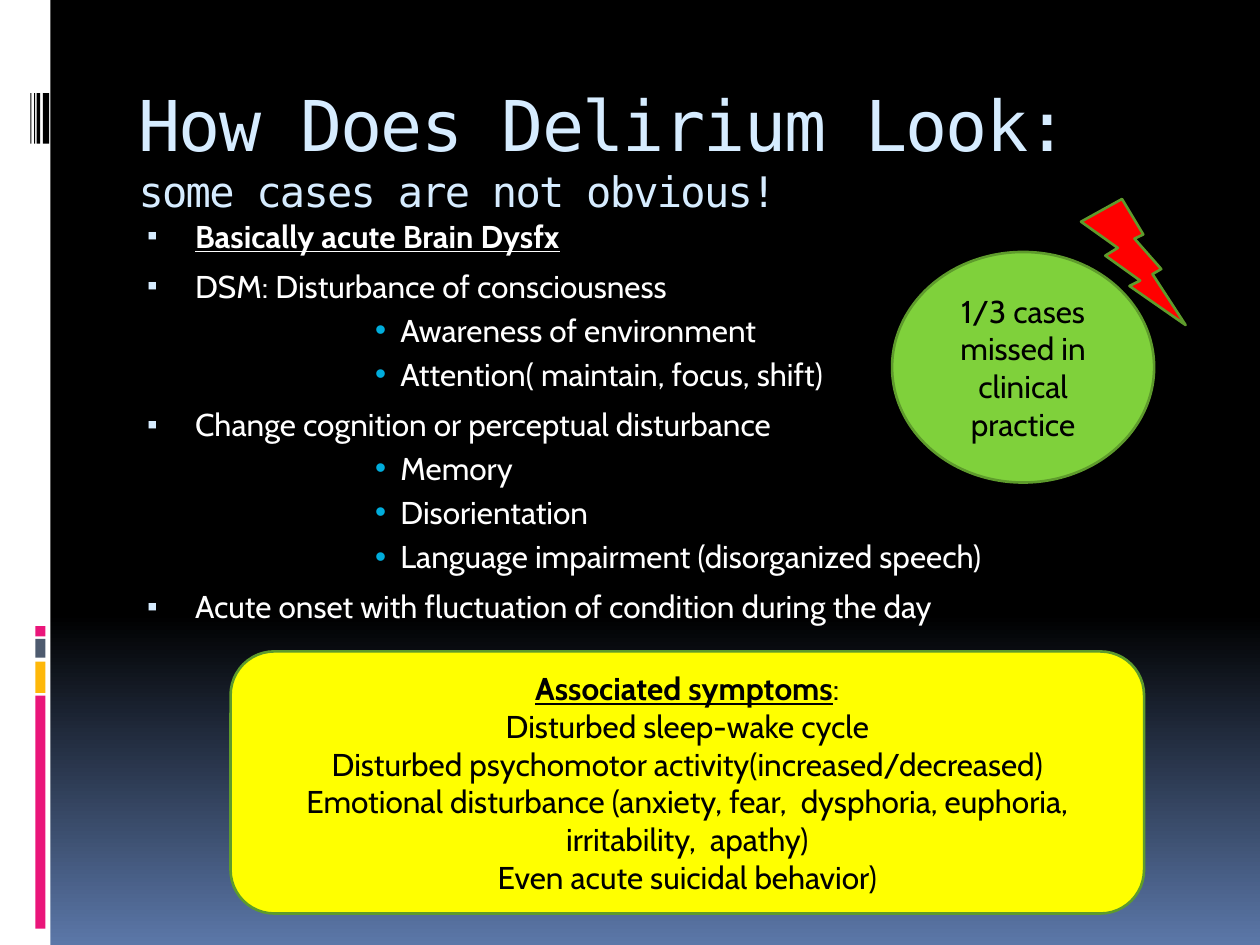
from copy import deepcopy

from lxml.etree import SubElement
from pptx import Presentation
from pptx.dml.color import RGBColor
from pptx.enum.shapes import MSO_SHAPE
from pptx.enum.text import MSO_ANCHOR, PP_ALIGN
from pptx.oxml.ns import qn
from pptx.util import Inches, Pt

WHITE, BLACK, PALE_BLUE = "FFFFFF", "000000", "D6ECFF"
PINK, AMBER, SLATE, CYAN = "EA157A", "FEB80A", "4E5B6F", "00ADDC"
RED, YELLOW, GREEN, DARK_GREEN = "FF0000", "FFFF00", "7FD13B", "5E9B2C"

SIDE_BLOCKS = [(5.52, 1.85, PINK), (5.25, 0.25, AMBER), (5.07, 0.15, SLATE), (4.97, 0.08, PINK)]
BARCODE = [(0.34, 0.05), (0.29, 0.03), (0.27, 0.01), (0.24, 0.01)]

FEATURES = [
    ("Basically acute Brain Dysfx", []),
    ("DSM: Disturbance of consciousness",
     ["Awareness of environment", "Attention( maintain, focus, shift)"]),
    ("Change cognition or perceptual disturbance",
     ["Memory", "Disorientation", "Language impairment (disorganized speech)"]),
    ("Acute onset with fluctuation of condition during the day", []),
]
SYMPTOMS = [
    "Disturbed sleep-wake cycle",
    "Disturbed psychomotor activity(increased/decreased)",
    "Emotional disturbance (anxiety, fear,  dysphoria, euphoria, irritability,  apathy)",
    "Even acute suicidal behavior)",
]


def color(hex_string):
    return RGBColor.from_string(hex_string)


class SlideBuilder:
    body_font = "Cabin"
    title_font = "DejaVu Sans Mono"
    body_size = 18

    def __init__(self, deck):
        self.page = deck.slides.add_slide(deck.slide_layouts[5])

    def background(self, stops):
        """Fill the page from top to bottom; stops are (percent, colour)."""
        fill = self.page.background.fill
        fill.gradient()
        fill.gradient_angle = 270
        stop_list = fill._fill._gradFill.gsLst
        stop_list.append(deepcopy(stop_list[-1]))
        for stop, (percent, hex_string) in zip(fill.gradient_stops, stops):
            stop.position = percent / 100
            stop.color.rgb = color(hex_string)

    def shape(self, kind, left, top, width, height, fill, line=None):
        shape = self.page.shapes.add_shape(
            kind, Inches(left), Inches(top), Inches(width), Inches(height))
        shape.shadow.inherit = False
        shape.fill.solid()
        shape.fill.fore_color.rgb = color(fill)
        if line:
            shape.line.color.rgb = color(line)
            shape.line.width = Pt(1.5)
        else:
            shape.line.fill.background()
        return shape

    def span(self, para, text, hex_string, size=body_size, font=body_font, strong=False):
        """Add a run; strong means bold and underlined."""
        span = para.add_run()
        span.text = text
        span.font.name = font
        span.font.size = Pt(size)
        span.font.color.rgb = color(hex_string)
        span.font.bold = span.font.underline = strong
        return span

    def title(self, lines):
        box = self.page.shapes.title
        box.left, box.top = Inches(1), Inches(0.56)
        box.width, box.height = Inches(8.5), Inches(1)
        frame = box.text_frame
        frame.word_wrap = True
        frame.vertical_anchor = MSO_ANCHOR.TOP
        frame.margin_top = Inches(0.09)
        para = frame.paragraphs[0]
        para.alignment = PP_ALIGN.LEFT
        for index, (text, size) in enumerate(lines):
            if index:
                para.add_line_break()
            span = self.span(para, text, PALE_BLUE, size, self.title_font)
            span.font._element.set("spc", "-100")

    def bullet(self, para, symbol, hex_string, indent, hanging, percent=100):
        properties = para._p.get_or_add_pPr()
        properties.set("marL", str(Inches(indent)))
        properties.set("indent", str(-Inches(hanging)))
        bullet_color = SubElement(properties, qn("a:buClr"))
        SubElement(bullet_color, qn("a:srgbClr"), val=hex_string)
        SubElement(properties, qn("a:buSzPct"), val=str(percent * 1000))
        SubElement(properties, qn("a:buFont"), typeface="Arial")
        SubElement(properties, qn("a:buChar"), char=symbol)

    def outline(self, left, top, width, height, features):
        box = self.page.shapes.add_textbox(
            Inches(left), Inches(top), Inches(width), Inches(height))
        frame = box.text_frame
        frame.word_wrap = True
        for index, (heading, details) in enumerate(features):
            para = frame.add_paragraph() if index else frame.paragraphs[0]
            para.space_before = Pt(7 if index else 0)
            self.bullet(para, "▪", PALE_BLUE, 0.45, 0.38, 95)
            self.span(para, heading, WHITE, strong=index == 0)
            for detail in details:
                para = frame.add_paragraph()
                para.level = 6
                para.space_before = Pt(3.6)
                self.bullet(para, "•", CYAN, 2.08, 0.2)
                self.span(para, detail, WHITE)

    def centred_text(self, shape, paragraphs):
        """Write paragraphs, each a list of (text, strong) spans."""
        frame = shape.text_frame
        frame.word_wrap = True
        frame.vertical_anchor = MSO_ANCHOR.MIDDLE
        for index, spans in enumerate(paragraphs):
            para = frame.add_paragraph() if index else frame.paragraphs[0]
            para.alignment = PP_ALIGN.CENTER
            for text, strong in spans:
                self.span(para, text, BLACK, strong=strong)


def main():
    deck = Presentation()
    deck.slide_width, deck.slide_height = Inches(10), Inches(7.5)
    slide = SlideBuilder(deck)
    slide.background([(0, BLACK), (65, BLACK), (100, "5B77A8")])

    slide.shape(MSO_SHAPE.RECTANGLE, 0, 0, 0.4, 7.5, WHITE)
    for top, height, fill in SIDE_BLOCKS:
        slide.shape(MSO_SHAPE.RECTANGLE, 0.28, top, 0.08, height, fill)
    for left, width in BARCODE:
        slide.shape(MSO_SHAPE.RECTANGLE, left, 0.74, width, 0.4, BLACK)

    slide.title([("How Does Delirium Look: ", 40), ("some cases are not obvious!", 24)])
    slide.outline(1, 1.67, 8.5, 5.28, FEATURES)

    slide.shape(MSO_SHAPE.LIGHTNING_BOLT, 8.58, 1.58, 0.83, 1, RED, DARK_GREEN)
    panel = slide.shape(MSO_SHAPE.ROUNDED_RECTANGLE, 1.83, 5.17, 7.25, 2.08, YELLOW, DARK_GREEN)
    slide.centred_text(panel, [[("Associated symptoms", True), (":", False)]]
                       + [[(symptom, False)] for symptom in SYMPTOMS])
    callout = slide.shape(MSO_SHAPE.OVAL, 7.08, 2, 2.08, 1.83, GREEN, DARK_GREEN)
    slide.centred_text(callout, [[("1/3 cases missed in clinical practice", False)]])

    deck.save("out.pptx")


if __name__ == "__main__":
    main()
